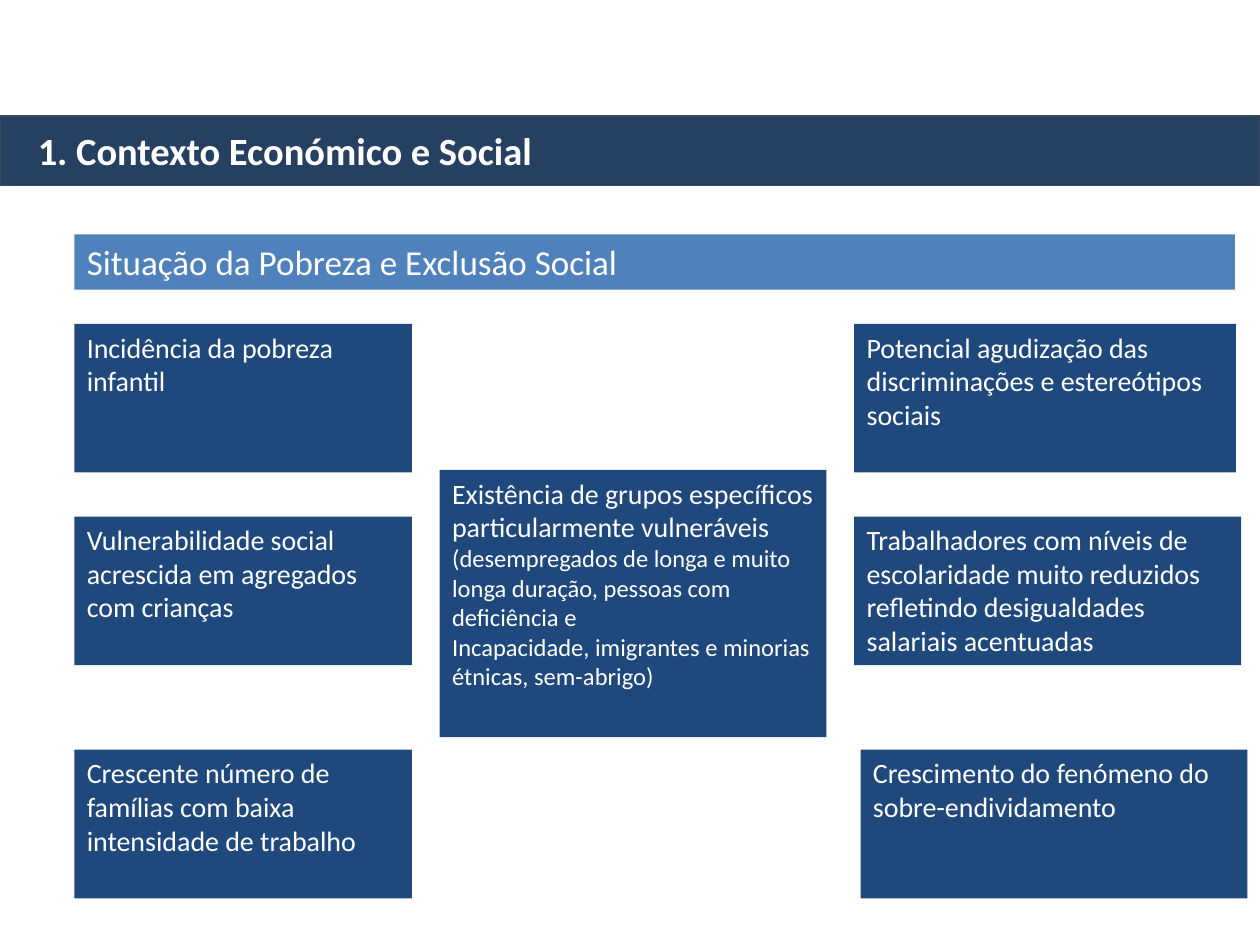
from pptx import Presentation
from pptx.dml.color import RGBColor
from pptx.enum.shapes import MSO_SHAPE
from pptx.enum.text import MSO_ANCHOR, MSO_AUTO_SIZE, PP_ALIGN
from pptx.util import Inches, Pt

RECT = MSO_SHAPE.RECTANGLE
TOP, MIDDLE = MSO_ANCHOR.TOP, MSO_ANCHOR.MIDDLE
LEFT = PP_ALIGN.LEFT
NO_FIT = MSO_AUTO_SIZE.NONE
FONT = "Calibri"
WHITE, NAVY, BLUE, DARK, EDGE = "FFFFFF", "1F497D", "4F81BD", "254061", "394959"


def color(code):
    return RGBColor.from_string(code)


def add_box(place, fill, paras):
    """Add a filled box; each paragraph is a list of (text, size) runs."""
    box = slide.shapes.add_shape(RECT, *[Inches(v) for v in place])
    box.shadow.inherit = False
    box.fill.solid()
    box.fill.fore_color.rgb = color(fill)
    box.line.fill.background()
    frame = box.text_frame
    frame.word_wrap = True
    frame.vertical_anchor = TOP
    for i, parts in enumerate(paras):
        para = frame.add_paragraph() if i else frame.paragraphs[0]
        para.alignment = LEFT
        for text, size in parts:
            run = para.add_run()
            run.text = text
            run.font.name = FONT
            run.font.size = Pt(size)
            run.font.color.rgb = color(WHITE)


prs = Presentation()
prs.slide_width, prs.slide_height = Inches(10), Inches(7.5)
slide = prs.slides.add_slide(prs.slide_layouts[5])

# Title band
title = slide.shapes.title
title.left, title.top = Inches(0), Inches(0.92)
title.width, title.height = Inches(10), Inches(0.55)
title.fill.solid()
title.fill.fore_color.rgb = color(DARK)
title.line.color.rgb = color(EDGE)
title.line.width = Pt(0.75)
frame = title.text_frame
frame.text = "1. Contexto Económico e Social"
frame.auto_size = NO_FIT
frame.vertical_anchor = MIDDLE
frame.margin_left = Inches(0.3)
para = frame.paragraphs[0]
para.alignment = LEFT
font = para.runs[0].font
font.name, font.size, font.bold = FONT, Pt(22), True
font.color.rgb = color(WHITE)

add_box((0.59, 1.86, 9.21, 0.44), BLUE,
        [[("Situação da Pobreza e Exclusão Social", 20)]])

# Side columns: top, left text, right text, right box left and width
rows = [
    (2.57, "Incidência da pobreza infantil",
     "Potencial agudização das discriminações e estereótipos sociais", 6.78, 3.03),
    (4.1, "Vulnerabilidade social acrescida em agregados com crianças",
     "Trabalhadores com níveis de escolaridade muito reduzidos refletindo "
     "desigualdades salariais acentuadas", 6.78, 3.07),
    (5.95, "Crescente número de famílias com baixa intensidade de trabalho",
     "Crescimento do fenómeno do sobre-endividamento", 6.83, 3.07),
]
for top, near, far, x, width in rows:
    add_box((0.59, top, 2.68, 1.18), NAVY, [[(near, 16)]])
    add_box((x, top, width, 1.18), NAVY, [[(far, 16)]])

# Central box
add_box((3.49, 3.73, 3.07, 2.12), NAVY, [
    [("Existência de grupos específicos particularmente vulneráveis ", 16),
     ("(desempregados de longa e muito longa duração, pessoas com deficiência e", 14)],
    [("Incapacidade, imigrantes e minorias étnicas, sem-abrigo)", 14)],
])

prs.save("out.pptx")
